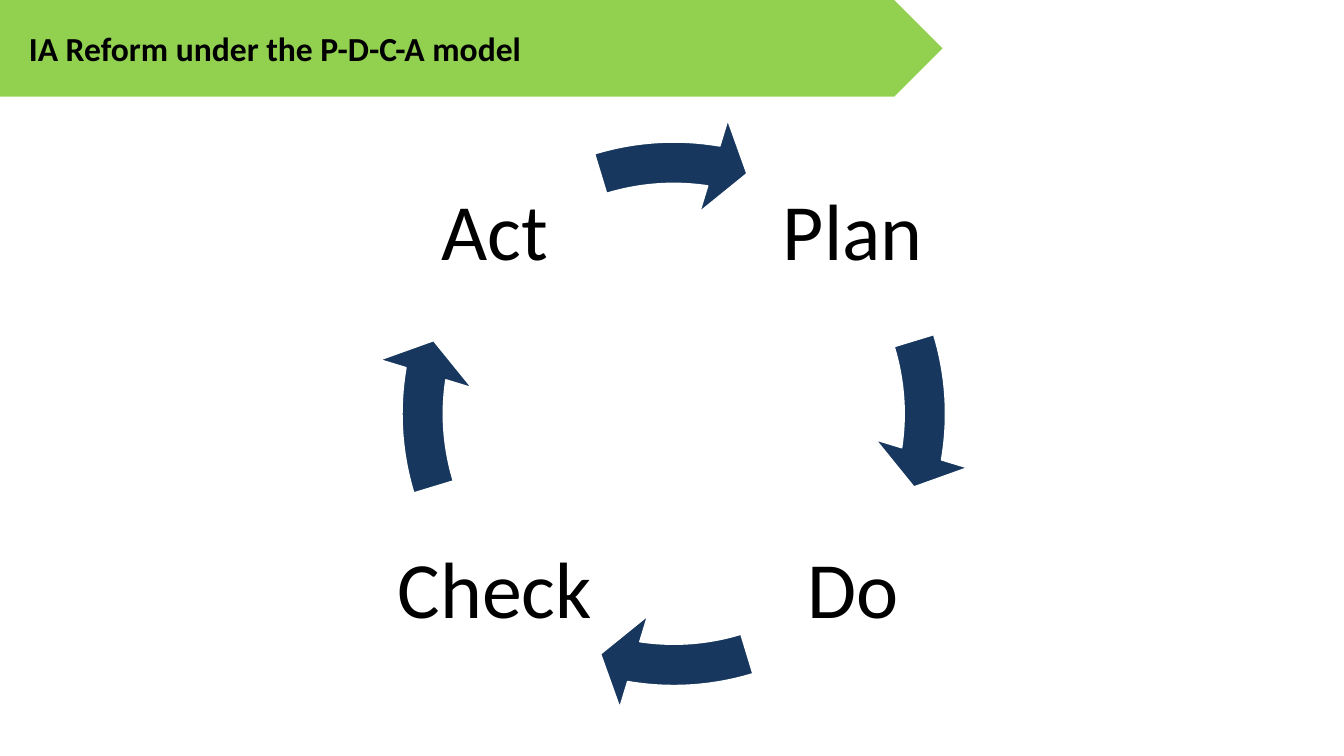
from pptx import Presentation
from pptx.dml.color import RGBColor
from pptx.enum.shapes import MSO_SHAPE as Preset
from pptx.enum.text import MSO_ANCHOR as Anchor, PP_ALIGN as Align
from pptx.util import Pt

COLORS = {"banner": "92D050", "arrow": "17375E", "edge": "FFFFFF", "text": "000000"}
FONT = "Calibri"

# Steps clockwise from the lower right, as (name, column, row)
STEPS = [("Do", 1, 1), ("Check", 0, 1), ("Act", 0, 0), ("Plan", 1, 0)]
ANGLE_UNIT = 0.6  # adjustment value of one degree


def color(name):
    return RGBColor.from_string(COLORS[name])


def add_span(para, text, size, bold=False):
    span = para.add_run()
    span.text = text
    span.font.name = FONT
    span.font.size = Pt(size)
    span.font.bold = bold
    span.font.color.rgb = color("text")


def add_banner(page, left, top, width, height, title):
    banner = page.shapes.add_shape(
        Preset.PENTAGON, Pt(left), Pt(top), Pt(width), Pt(height))
    banner.shadow.inherit = False
    banner.fill.solid()
    banner.fill.fore_color.rgb = color("banner")
    banner.line.fill.background()
    banner.text_frame.vertical_anchor = Anchor.MIDDLE
    para = banner.text_frame.paragraphs[0]
    para.alignment = Align.LEFT
    para._p.get_or_add_pPr().set("marL", str(Pt(13.5)))
    add_span(para, title, 24, bold=True)


def add_arrow(page, left, top, size, turn):
    """Arc arrow on the circle, turned clockwise from the right-hand side."""
    arrow = page.shapes.add_shape(
        Preset.CIRCULAR_ARROW, Pt(left), Pt(top), Pt(size), Pt(size))
    arrow.shadow.inherit = False
    arrow.fill.solid()
    arrow.fill.fore_color.rgb = color("arrow")
    arrow.line.color.rgb = color("edge")
    arrow.line.width = Pt(1)
    head, start = (9.18 + turn) % 360, (343.07 + turn) % 360
    values = [0.069, 7.75 * ANGLE_UNIT, head * ANGLE_UNIT, start * ANGLE_UNIT, 0.08]
    for index, value in enumerate(values):
        arrow.adjustments[index] = value


def add_label(page, left, top, size, text):
    box = page.shapes.add_textbox(Pt(left), Pt(top), Pt(size), Pt(size))
    frame = box.text_frame
    frame.word_wrap = True
    frame.vertical_anchor = Anchor.MIDDLE
    frame.margin_left = frame.margin_right = Pt(5.7)
    frame.margin_top = frame.margin_bottom = Pt(5.7)
    para = frame.paragraphs[0]
    para.alignment = Align.CENTER
    para.line_spacing = 0.9
    add_span(para, text, 57)


def add_cycle(page, left, top, size):
    inset, label = 10.1, 151.2
    pitch = size - 2 * inset - label
    for index, (name, column, row) in enumerate(STEPS):
        add_arrow(page, left, top, size, 90 * index)
        add_label(page, left + inset + column * pitch,
                  top + inset + row * pitch, label, name)


def main():
    deck = Presentation()
    deck.slide_width, deck.slide_height = Pt(960), Pt(540)
    page = deck.slides.add_slide(deck.slide_layouts[6])
    add_banner(page, 0, 0, 673.2, 69.1, "IA Reform under the P-D-C-A model")
    add_cycle(page, 267.8, 82.1, 427)
    deck.save("out.pptx")


if __name__ == "__main__":
    main()
